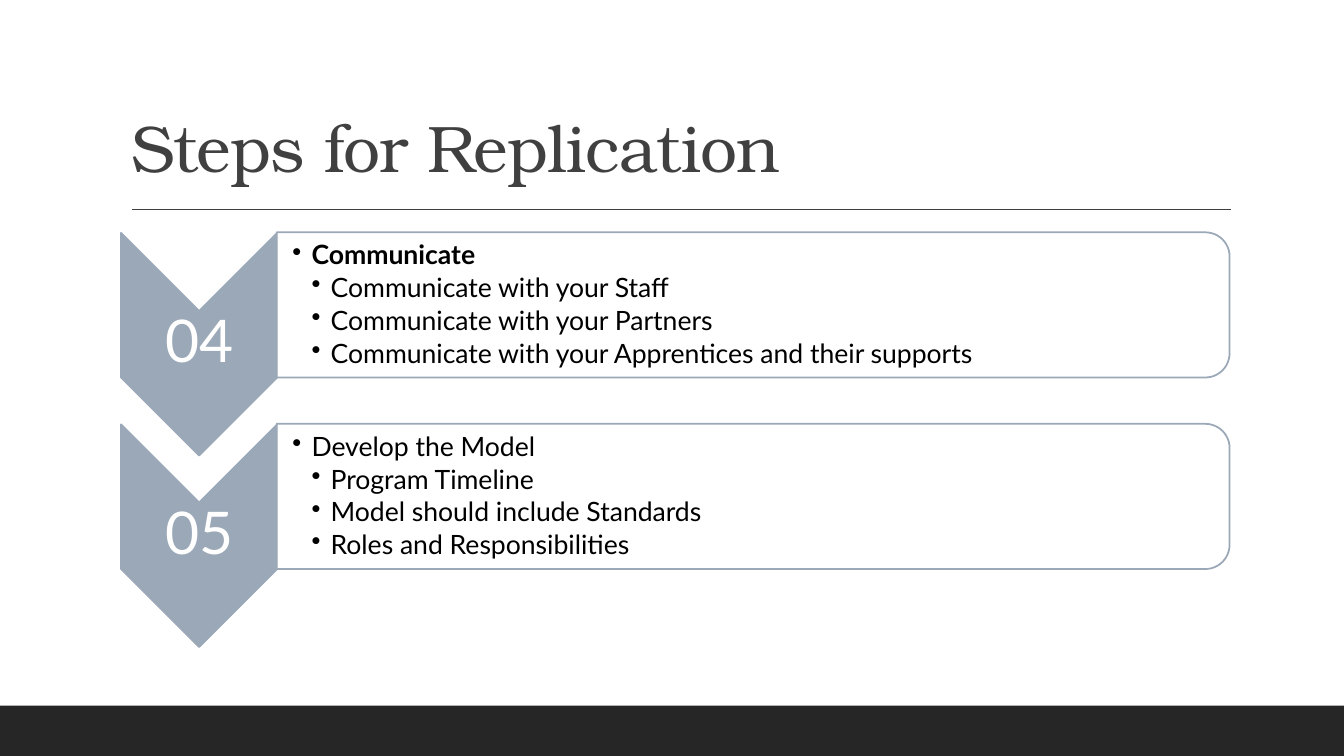
"""Build the "Steps for Replication" slide with two numbered chevron steps."""
from lxml import etree
from pptx import Presentation
from pptx.dml.color import RGBColor
from pptx.enum.shapes import MSO_CONNECTOR, MSO_SHAPE
from pptx.enum.text import MSO_ANCHOR, MSO_AUTO_SIZE, PP_ALIGN
from pptx.oxml.ns import qn
from pptx.util import Pt

PX = 9144
LEFT, CENTER = PP_ALIGN.LEFT, PP_ALIGN.CENTER
MIDDLE, BOTTOM = MSO_ANCHOR.MIDDLE, MSO_ANCHOR.BOTTOM
NO_FIT = MSO_AUTO_SIZE.NONE
RECTANGLE, CHEVRON = MSO_SHAPE.RECTANGLE, MSO_SHAPE.CHEVRON
ROUNDED_PANEL = MSO_SHAPE.ROUND_2_SAME_RECTANGLE
STRAIGHT = MSO_CONNECTOR.STRAIGHT

THEME = {
    "white": RGBColor(0xFF, 0xFF, 0xFF),
    "black": RGBColor(0, 0, 0),
    "bar": RGBColor(0x26, 0x26, 0x26),
    "ink": RGBColor(0x40, 0x40, 0x40),
    "steel": RGBColor(0x9B, 0xA8, 0xB7),
    "title_font": "TeX Gyre Bonum",
    "body_font": "Lato",
    "title_size": Pt(47),
    "number_size": Pt(42),
    "body_size": Pt(19),
}

STEPS = [
    ("04", True, ["Communicate", "Communicate with your Staff", "Communicate with your Partners",
                  "Communicate with your Apprentices and their supports"]),
    ("05", False, ["Develop the Model", "Program Timeline", "Model should include Standards",
                   "Roles and Responsibilities"]),
]
STEP_PITCH = 190
BULLET_INDENT = 19


def add_block(page, kind, bounds, fill, line=None, rotation=0):
    """Add a filled preset shape with an optional outline."""
    block = page.shapes.add_shape(kind, *(value * PX for value in bounds))
    block.shadow.inherit = False
    block.rotation = rotation
    block.fill.solid()
    block.fill.fore_color.rgb = THEME[fill]
    if line:
        block.line.color.rgb = THEME[line]
        block.line.width = Pt(1.25)
    else:
        block.line.fill.background()
    return block


def write_text(box, lines, kind, color, anchor, align, insets, space_after=0):
    """Fill a box with (text, bold) lines in one theme style."""
    frame = box.text_frame
    margins = dict(zip(("margin_left", "margin_top", "margin_right", "margin_bottom"),
                       (value * PX for value in insets)))
    frame_format = {"word_wrap": True, "auto_size": NO_FIT, "vertical_anchor": anchor, **margins}
    for name, value in frame_format.items():
        setattr(frame, name, value)
    font = THEME["title_font" if kind == "title" else "body_font"]
    for index, (text, bold) in enumerate(lines):
        para = frame.add_paragraph() if index else frame.paragraphs[0]
        para_format = {"alignment": align, "line_spacing": 0.9,
                       "space_before": Pt(0), "space_after": Pt(space_after)}
        for name, value in para_format.items():
            setattr(para, name, value)
        span = para.add_run()
        span.text = text
        for name, value in {"name": font, "size": THEME[kind + "_size"], "bold": bold}.items():
            setattr(span.font, name, value)
        span.font.color.rgb = THEME[color]
    return frame.paragraphs


deck = Presentation()
deck.slide_width, deck.slide_height = 1333 * PX, 750 * PX
page = deck.slides.add_slide(deck.slide_layouts[5])

add_block(page, RECTANGLE, (0, 700, 1333, 50), "bar")

rule = page.shapes.add_connector(STRAIGHT, 131 * PX, 208 * PX, 1221 * PX, 208 * PX)
rule.line.color.rgb = THEME["ink"]
rule.line.width = Pt(1)
etree.SubElement(rule.element.spPr, qn("a:effectLst"))

title = page.shapes.title
title_place = {"left": 120, "top": 31, "width": 1100, "height": 159}
for name, value in title_place.items():
    setattr(title, name, value * PX)
title_para = write_text(title, [("Steps for Replication", False)], "title", "ink",
                        BOTTOM, LEFT, (10, 5, 10, 5))[0]
title_para.runs[0].font._element.set("spc", "-50")

for row, (number, bold_heading, lines) in enumerate(STEPS):
    offset = row * STEP_PITCH
    add_block(page, CHEVRON, (87, 264 + offset, 221, 155), "steel", "steel", 90)
    number_box = page.shapes.add_textbox(*(v * PX for v in (120, 308 + offset, 155, 66)))
    write_text(number_box, [(number, False)], "number", "white", MIDDLE, CENTER, (3, 3, 3, 3), 14.7)

    panel = add_block(page, ROUNDED_PANEL, (675, -170 + offset, 144, 945), "white", "steel", 90)
    panel_color = panel.element.spPr.find(qn("a:solidFill"))[0]
    etree.SubElement(panel_color, qn("a:alpha"), val="90000")

    detail_box = page.shapes.add_textbox(*(v * PX for v in (275, 238 + offset, 938, 130)))
    styled_lines = [(text, bold_heading and index == 0) for index, text in enumerate(lines)]
    paras = write_text(detail_box, styled_lines, "body", "black", MIDDLE, LEFT, (15, 1, 1, 1), 2.85)
    for index, para in enumerate(paras):
        para.level = 2 if index else 1
        properties = para._p.get_or_add_pPr()
        properties.set("marL", str(para.level * BULLET_INDENT * PX))
        properties.set("indent", str(-BULLET_INDENT * PX))
        etree.SubElement(properties, qn("a:buChar"), char="•")

deck.save("out.pptx")
